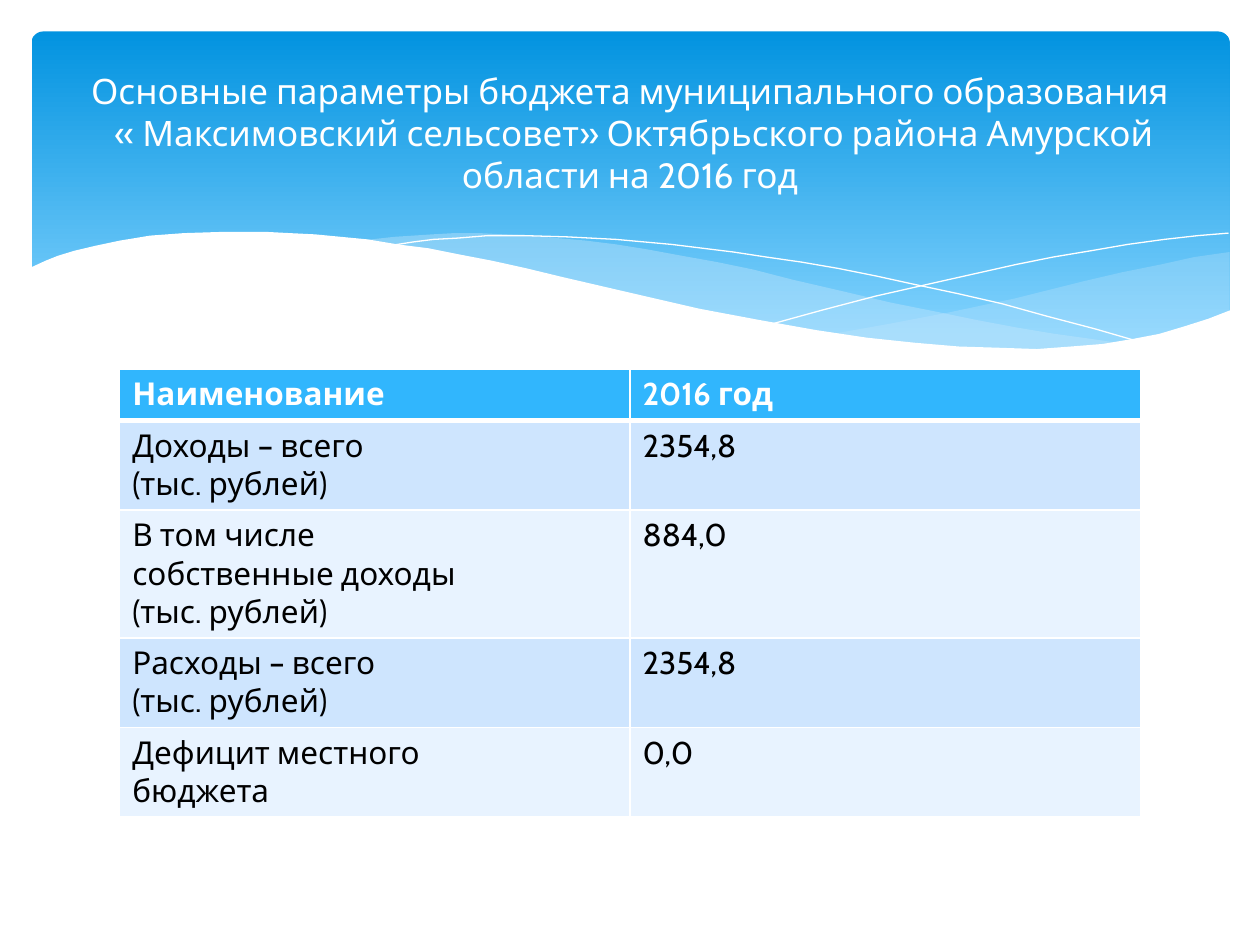
from lxml import etree
from pptx import Presentation
from pptx import util as u
from pptx.dml import color
from pptx.enum import shapes, text
from pptx.oxml import ns

COLORS = {
    "white": "FFFFFF",
    "black": "000000",
    "banner_top": "0293E0",
    "banner_bottom": "83D3FE",
    "wave": "C6E7FC",
    "header": "31B6FD",
    "band_dark": "CEE5FE",
    "band_light": "E8F3FF",
}
FONT = "Cabin"

RIGHT_WAVE = [
    (9.76, 2), (9.48, 2.04), (9.21, 2.1), (8.91, 2.16), (8.61, 2.23), (8.05, 2.37),
    (7.53, 2.48), (7.06, 2.57), (6.61, 2.65), (6.91, 2.69), (7.19, 2.72), (7.45, 2.75),
    (7.69, 2.77), (8.03, 2.78), (8.35, 2.77), (8.63, 2.75), (8.89, 2.72), (9.13, 2.67),
    (9.35, 2.62), (9.49, 2.57), (9.63, 2.52), (9.76, 2.47),
]
MIDDLE_WAVE = [
    (8.93, 2.73), (8.66, 2.69), (8.37, 2.65), (8.07, 2.6), (7.75, 2.54), (7.41, 2.47),
    (7.06, 2.4), (6.68, 2.31), (6.29, 2.22), (5.98, 2.14), (5.69, 2.08), (5.41, 2.03),
    (5.14, 1.98), (4.89, 1.94), (4.65, 1.91), (4.42, 1.89), (4.2, 1.87), (3.99, 1.86),
    (3.8, 1.85), (3.61, 1.85), (3.44, 1.86), (3.13, 1.88), (2.86, 1.91), (3.23, 1.96),
    (3.62, 2.03), (4.04, 2.11), (4.49, 2.22), (4.91, 2.32), (5.3, 2.4), (5.66, 2.48),
    (6.01, 2.55), (6.34, 2.61), (6.65, 2.66), (6.95, 2.7), (7.22, 2.74), (7.48, 2.76),
    (7.73, 2.77), (7.96, 2.78), (8.28, 2.78), (8.57, 2.77), (8.76, 2.75),
]
FALLING_LINE = [
    (3.09, 1.95), (3.28, 1.92), (3.44, 1.9), (3.63, 1.89), (3.87, 1.87), (4.16, 1.87),
    (4.5, 1.88), (4.89, 1.9), (5.33, 1.94), (5.82, 2), (6.08, 2.04), (6.36, 2.08),
    (6.65, 2.13), (6.95, 2.19), (7.27, 2.26), (7.6, 2.33), (7.95, 2.41), (8.31, 2.51),
    (8.69, 2.61), (9.07, 2.72),
]
RISING_LINE = [
    (6.13, 2.57), (6.53, 2.46), (6.95, 2.35), (7.48, 2.23), (8.06, 2.1), (8.36, 2.04),
    (8.66, 1.99), (8.95, 1.94), (9.24, 1.9), (9.51, 1.87), (9.75, 1.85),
]
WHITE_WAVE = [
    (9.77, 2.46), (9.59, 2.53), (9.4, 2.59), (9.2, 2.65), (8.99, 2.69), (8.75, 2.73),
    (8.5, 2.75), (8.23, 2.77), (7.93, 2.76), (7.61, 2.75), (7.26, 2.72), (6.88, 2.68),
    (6.48, 2.62), (6.03, 2.54), (5.55, 2.45), (5.03, 2.33), (4.47, 2.2), (4.18, 2.13),
    (3.91, 2.07), (3.65, 2.02), (3.4, 1.97), (3.16, 1.94), (2.92, 1.9), (2.71, 1.88),
    (2.5, 1.86), (2.3, 1.85), (2.11, 1.84), (1.77, 1.84), (1.46, 1.85), (1.19, 1.87),
    (0.95, 1.91), (0.76, 1.95), (0.59, 1.99), (0.46, 2.03), (0.36, 2.07), (0.23, 2.13),
    (0.23, 3.29), (9.77, 3.29),
]

TITLE = (
    "Основные параметры бюджета муниципального образования\v"
    " « Максимовский сельсовет» Октябрьского района Амурской области на 2016 год"
)
BUDGET = [
    ("Наименование", "2016 год"),
    ("Доходы – всего\n(тыс. рублей)", "2354,8"),
    ("В том числе\nсобственные доходы\n(тыс. рублей)", "884,0"),
    ("Расходы – всего\n(тыс. рублей)", "2354,8"),
    ("Дефицит местного\nбюджета", "0,0"),
]
ROW_HEIGHTS = [0.4, 0.71, 1.01, 0.71, 0.71]


def rgb(name):
    return color.RGBColor.from_string(COLORS[name])


def write_text(frame, content, size=18, fill="black", bold=False, align=None):
    frame.text = content
    for paragraph in frame.paragraphs:
        paragraph.alignment = align
        for run in paragraph.runs:
            run.font.name = FONT
            run.font.size = u.Pt(size)
            run.font.bold = bold
            run.font.color.rgb = rgb(fill)


def add_curve(slide, box, points, fill=None, opacity=100):
    left, top = box[:2]
    places = [(u.Inches(left + x), u.Inches(top + y)) for x, y in points]
    builder = slide.shapes.build_freeform(*places[0])
    builder.add_line_segments(places[1:], close=fill is not None)
    shape = builder.convert_to_shape()
    shape.shadow.inherit = False
    if fill is None:
        shape.fill.background()
        shape.line.color.rgb = rgb("white")
        shape.line.width = u.Pt(0)
        return
    shape.line.fill.background()
    shape.fill.solid()
    shape.fill.fore_color.rgb = rgb(fill)
    if opacity < 100:
        tint = shape.fill._xPr.find(".//" + ns.qn("a:srgbClr"))
        etree.SubElement(tint, ns.qn("a:alpha"), val=str(opacity * 1000))


def add_banner(slide, box):
    left, top, width, _ = box
    inset = 0.25
    panel = slide.shapes.add_shape(
        shapes.MSO_SHAPE.ROUNDED_RECTANGLE,
        u.Inches(left + inset), u.Inches(top + inset),
        u.Inches(width - 2 * inset + 0.01), u.Inches(2.7),
    )
    panel.adjustments[0] = 0.034
    panel.shadow.inherit = False
    panel.line.fill.background()
    panel.fill.gradient()
    panel.fill.gradient_angle = 270
    stops = zip(panel.fill.gradient_stops, ("banner_top", "banner_bottom"), (0, 0.9))
    for stop, name, position in stops:
        stop.color.rgb = rgb(name)
        stop.position = position

    add_curve(slide, box, RIGHT_WAVE, fill="wave", opacity=29)
    add_curve(slide, box, MIDDLE_WAVE, fill="wave", opacity=40)
    add_curve(slide, box, FALLING_LINE)
    add_curve(slide, box, RISING_LINE)
    add_curve(slide, box, WHITE_WAVE, fill="white")


def add_title(slide, box):
    title = slide.shapes.title
    title.left, title.top, title.width, title.height = map(u.Inches, box)
    frame = title.text_frame
    write_text(frame, TITLE, size=20, fill="white", align=text.PP_ALIGN.CENTER)
    frame.word_wrap = True
    frame.vertical_anchor = text.MSO_ANCHOR.MIDDLE
    slide.shapes._spTree.append(title._element)


def set_borders(cell, **widths):
    properties = cell._tc.get_or_add_tcPr()
    for side in "LRTB":
        width = u.Pt(widths.get(side, 1))
        line = etree.SubElement(properties, ns.qn(f"a:ln{side}"), w=str(width))
        solid = etree.SubElement(line, ns.qn("a:solidFill"))
        etree.SubElement(solid, ns.qn("a:srgbClr"), val=COLORS["white"])


def add_budget_table(slide, box):
    frame = slide.shapes.add_table(len(BUDGET), len(BUDGET[0]), *map(u.Inches, box))
    table = frame.table
    for row, height in zip(table.rows, ROW_HEIGHTS):
        row.height = u.Inches(height)
    for row_index, values in enumerate(BUDGET):
        header = row_index == 0
        band = "header" if header else ("band_light", "band_dark")[row_index % 2]
        for column_index, value in enumerate(values):
            cell = table.cell(row_index, column_index)
            write_text(cell.text_frame, value, fill="white" if header else "black", bold=header)
            set_borders(cell, B=3 if header else 1, T=3 if row_index == 1 else 1)
            cell.fill.solid()
            cell.fill.fore_color.rgb = rgb(band)


def main():
    presentation = Presentation()
    presentation.slide_width = u.Inches(10)
    presentation.slide_height = u.Inches(7.5)
    slide = presentation.slides.add_slide(presentation.slide_layouts[5])
    add_banner(slide, (0, 0, 10, 3.29))
    add_budget_table(slide, (0.95, 2.93, 8.1, sum(ROW_HEIGHTS)))
    add_title(slide, (0.5, 0.37, 9, 1.37))
    presentation.save("out.pptx")


if __name__ == "__main__":
    main()
